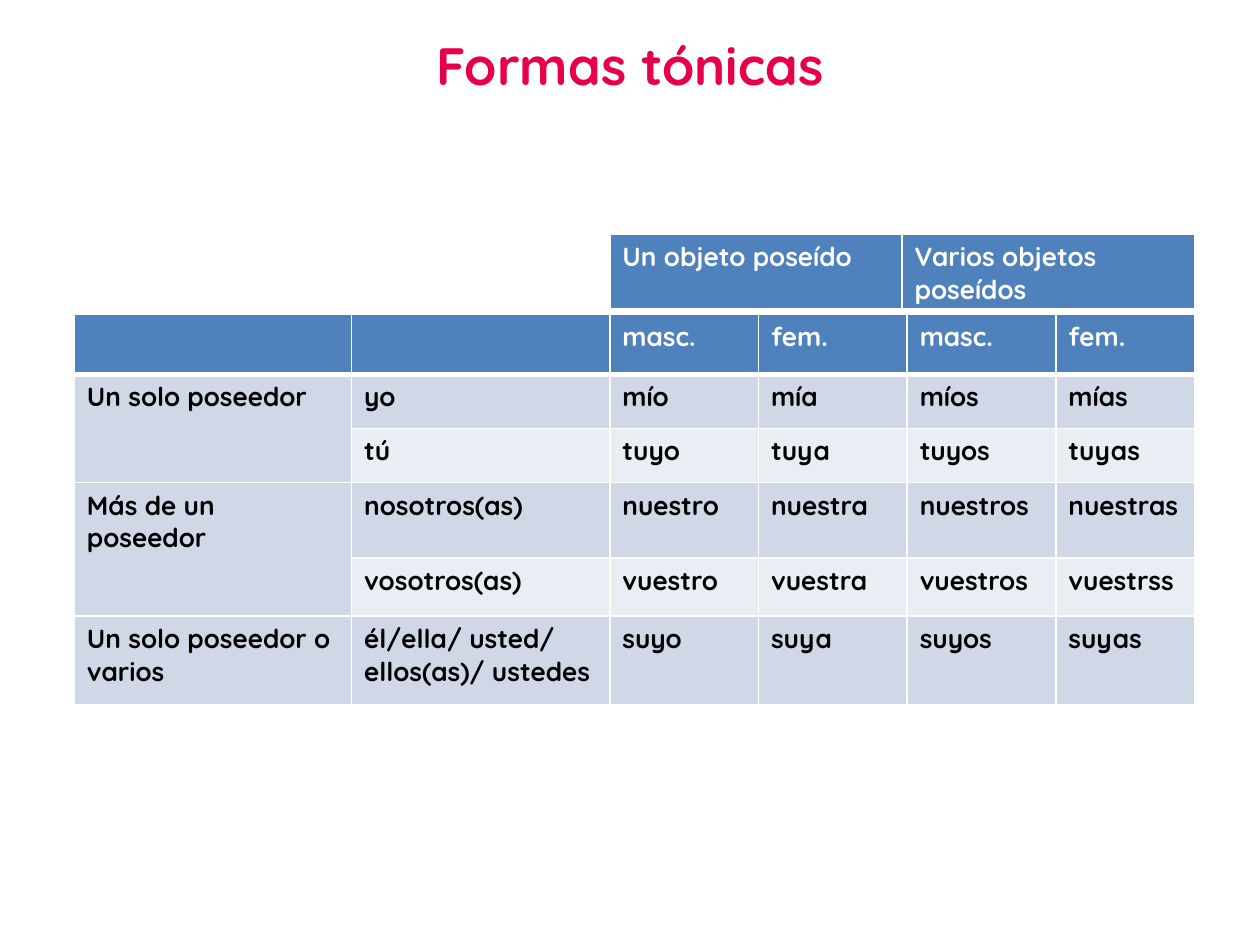
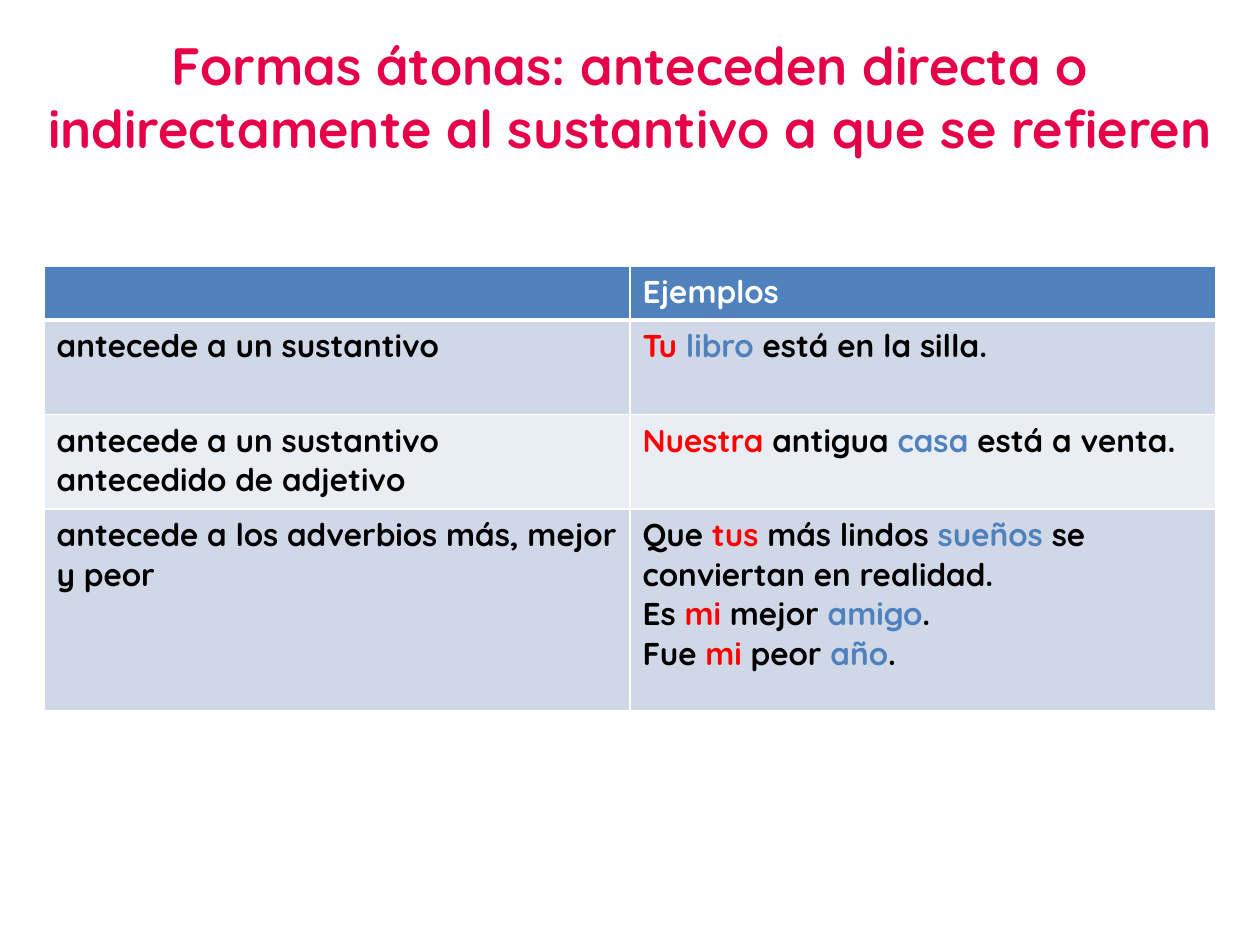
"""Build two slides on the tonic and atonic forms of Spanish possessives."""
from lxml import etree
from pptx import Presentation
from pptx.dml.color import RGBColor
from pptx.enum.text import MSO_AUTO_SIZE, PP_ALIGN
from pptx.oxml.ns import qn
from pptx.util import Inches, Pt

CENTER = PP_ALIGN.CENTER
GROW = MSO_AUTO_SIZE.SHAPE_TO_FIT_TEXT

WHITE = RGBColor(0xFF, 0xFF, 0xFF)
BLACK = RGBColor(0x00, 0x00, 0x00)
RED = RGBColor(0xFF, 0x00, 0x00)
BLUE = RGBColor(0x4F, 0x81, 0xBD)
CRIMSON = RGBColor(0xE6, 0x00, 0x49)
BANDS = (RGBColor(0xE9, 0xED, 0xF4), RGBColor(0xD0, 0xD8, 0xE8))

SLIDE_WIDTH, SLIDE_HEIGHT = 10, 7.5
TITLE_TOP = 0.21
TITLE_SIZE = 30
THIN, THICK = 1, 3
FONT = {"name": "Quicksand", "bold": True}

OBJECTS = [["Un objeto poseído", "Varios objetos poseídos"]]

TONIC_FORMS = [
    ["", "", "masc.", "fem.", "masc.", "fem."],
    ["Un solo poseedor", "yo", "mío", "mía", "míos", "mías"],
    [None, "tú", "tuyo", "tuya", "tuyos", "tuyas"],
    ["Más de un poseedor", "nosotros(as)", "nuestro", "nuestra", "nuestros", "nuestras"],
    [None, "vosotros(as)", "vuestro", "vuestra", "vuestros", "vuestrss"],
    ["Un solo poseedor o varios", "él/ella/ usted/ ellos(as)/ ustedes",
     "suyo", "suya", "suyos", "suyas"],
]

ATONIC_EXAMPLES = [
    ["", "Ejemplos"],
    ["antecede a un sustantivo",
     [[("Tu ", RED), ("libro ", BLUE), ("está en la silla.", BLACK)]]],
    ["antecede a un sustantivo antecedido de adjetivo",
     [[("Nuestra ", RED), ("antigua ", BLACK), ("casa", BLUE), (" está a venta.", BLACK)]]],
    ["antecede a los adverbios más, mejor y peor",
     [[("Que ", BLACK), ("tus", RED), (" más lindos ", BLACK), ("sueños", BLUE),
       (" se conviertan en realidad.", BLACK)],
      [("Es ", BLACK), ("mi ", RED), ("mejor ", BLACK), ("amigo", BLUE), (".", BLACK)],
      [("Fue ", BLACK), ("mi ", RED), ("peor ", BLACK), ("año", BLUE), (".", BLACK)]]],
]

LESSONS = [
    {"title": "Formas tónicas", "title_height": 0.61, "grids": [
        {"rows": OBJECTS, "left": 4.84, "top": 1.86, "size": 15,
         "widths": [2.32] * 2, "heights": [0.6]},
        {"rows": TONIC_FORMS, "left": 0.59, "top": 2.49, "size": 15,
         "widths": [2.2, 2.05, 1.18, 1.18, 1.18, 1.1],
         "heights": [0.48, 0.43, 0.43, 0.6, 0.46, 0.7]}]},
    {"title": "Formas átonas: anteceden directa o indirectamente "
              "al sustantivo a que se refieren",
     "title_height": 1.11, "grids": [
        {"rows": ATONIC_EXAMPLES, "left": 0.35, "top": 2.11, "size": 18,
         "widths": [4.65] * 2, "heights": [0.43, 0.75, 0.75, 1.6]}]},
]


def style_font(font, size, color):
    for attribute, value in {**FONT, "size": Pt(size)}.items():
        setattr(font, attribute, value)
    font.color.rgb = color


def write(frame, content, size, color):
    paragraphs = [[(content, color)]] if isinstance(content, str) else content
    for index, words in enumerate(paragraphs):
        paragraph = frame.add_paragraph() if index else frame.paragraphs[0]
        for text, word_color in words:
            run = paragraph.add_run()
            run.text = text
            style_font(run.font, size, word_color)


def draw_borders(cell, row):
    widths = {"a:lnL": THIN, "a:lnR": THIN,
              "a:lnT": THICK if row == 1 else THIN,
              "a:lnB": THICK if row == 0 else THIN}
    properties = cell._tc.get_or_add_tcPr()
    for position, (side, width) in enumerate(widths.items()):
        line = etree.Element(qn(side), w=str(Pt(width)))
        fill = etree.SubElement(line, qn("a:solidFill"))
        etree.SubElement(fill, qn("a:srgbClr"), val=str(WHITE))
        properties.insert(position, line)


def add_title(slide, title, height):
    box = slide.shapes.add_textbox(
        0, Inches(TITLE_TOP), Inches(SLIDE_WIDTH), Inches(height))
    frame = box.text_frame
    for attribute, value in {"word_wrap": True, "auto_size": GROW}.items():
        setattr(frame, attribute, value)
    write(frame, title, TITLE_SIZE, CRIMSON)
    frame.paragraphs[0].alignment = CENTER


def add_grid(slide, rows, left, top, size, widths, heights):
    table = slide.shapes.add_table(
        len(rows), len(widths), Inches(left), Inches(top),
        Inches(sum(widths)), Inches(sum(heights))).table
    for column, width in zip(table.columns, widths):
        column.width = Inches(width)
    for row, height in zip(table.rows, heights):
        row.height = Inches(height)
    for r, contents in enumerate(rows):
        for c, content in enumerate(contents):
            cell = table.cell(r, c)
            cell.fill.solid()
            cell.fill.fore_color.rgb = BANDS[r % 2] if r else BLUE
            draw_borders(cell, r)
            if content is None:
                table.cell(r - 1, c).merge(cell)
            elif content:
                write(cell.text_frame, content, size, BLACK if r else WHITE)


def main():
    deck = Presentation()
    deck.slide_width, deck.slide_height = Inches(SLIDE_WIDTH), Inches(SLIDE_HEIGHT)
    for lesson in LESSONS:
        slide = deck.slides.add_slide(deck.slide_layouts[6])
        add_title(slide, lesson["title"], lesson["title_height"])
        for grid in lesson["grids"]:
            add_grid(slide, **grid)
    deck.save("out.pptx")


if __name__ == "__main__":
    main()
